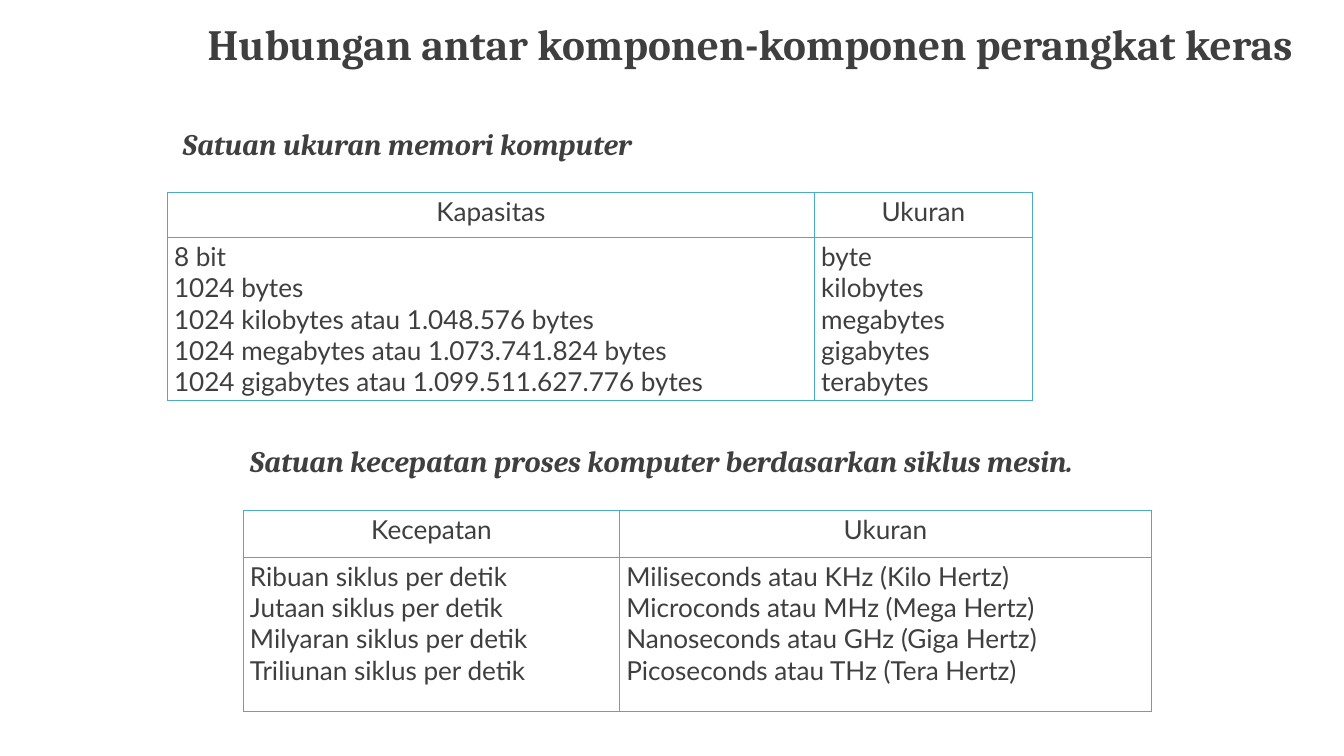
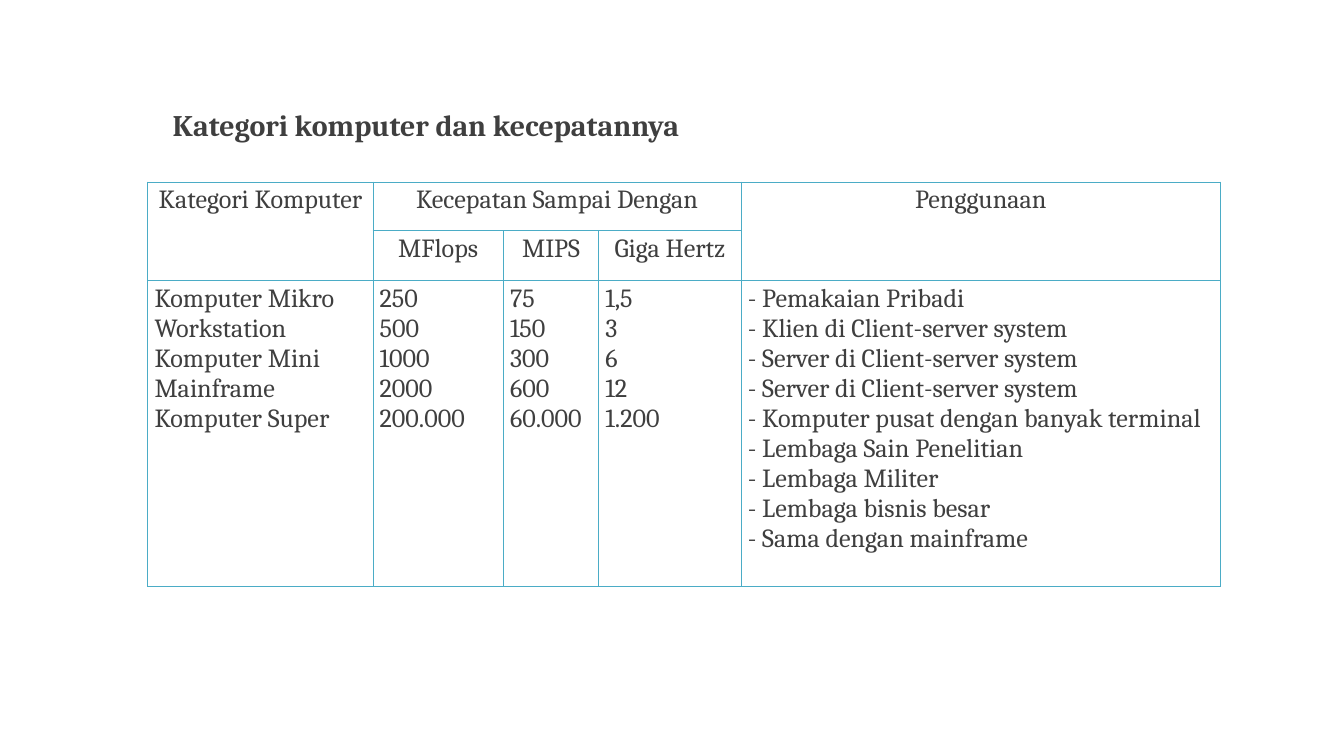
from dataclasses import dataclass

from lxml import etree
from pptx import Presentation
from pptx.dml.color import RGBColor
from pptx.enum.text import MSO_ANCHOR, MSO_AUTO_SIZE, PP_ALIGN
from pptx.oxml.ns import qn
from pptx.util import Inches, Pt

LEFT, MID, JUST = PP_ALIGN.LEFT, PP_ALIGN.CENTER, PP_ALIGN.JUSTIFY
CENTRE = MSO_ANCHOR.MIDDLE
FIXED = MSO_AUTO_SIZE.NONE
TITLE_ONLY = 5


@dataclass(frozen=True)
class Theme:
    ink: str = "3F3F3F"
    rule: str = "4BACC6"
    paper: str = "FFFFFF"
    serif: str = "Cambria"
    sans: str = "Lato"
    title: float = 46.2
    head: float = 32
    body: float = 28
    hang: float = 0.38
    line: float = 1


class Deck:
    def __init__(self, theme):
        self.theme = theme
        self.prs = Presentation()
        self.prs.slide_width = Inches(20)
        self.prs.slide_height = Inches(11.25)
        self.slide = None

    def page(self):
        layout = self.prs.slide_layouts[TITLE_ONLY]
        self.slide = self.prs.slides.add_slide(layout)
        fill = self.slide.background.fill
        fill.solid()
        fill.fore_color.rgb = RGBColor.from_string(self.theme.paper)

    def style(self, para, face, size, align, bold=False, italic=False):
        para.alignment = align
        for run in para.runs:
            font = run.font
            font.name, font.size = face, Pt(size)
            font.bold, font.italic = bold, italic
            font.color.rgb = RGBColor.from_string(self.theme.ink)

    def fit(self, shape, text, box, size, align, italic):
        """Place a one-line heading and style it."""
        shape.left, shape.top, shape.width, shape.height = map(Inches, box)
        frame = shape.text_frame
        frame.text = text
        frame.word_wrap = True
        frame.auto_size = FIXED
        frame.vertical_anchor = CENTRE
        self.style(frame.paragraphs[0], self.theme.serif, size, align,
                   bold=True, italic=italic)

    def title(self, text, box, size, align):
        self.fit(self.slide.shapes.title, text, box, size, align, False)

    def head(self, text, box):
        shape = self.slide.shapes.add_textbox(*map(Inches, box))
        self.fit(shape, text, box, self.theme.head, LEFT, True)

    def edge(self, cell):
        """Draw the four borders of a cell and leave it unfilled."""
        props = cell._tc.get_or_add_tcPr()
        for side in ("lnL", "lnR", "lnT", "lnB"):
            line = etree.SubElement(props, qn("a:" + side),
                                    w=str(Pt(self.theme.line)))
            fill = etree.SubElement(line, qn("a:solidFill"))
            etree.SubElement(fill, qn("a:srgbClr"), val=self.theme.rule)
        cell.fill.background()

    def label(self, cell, text, face, align):
        cell.text_frame.text = text
        for para in cell.text_frame.paragraphs:
            props = para._p.get_or_add_pPr()
            props.set("marL", str(Inches(self.theme.hang)))
            props.set("indent", str(-Inches(self.theme.hang)))
            self.style(para, face, self.theme.body, align)

    def table(self, spot, cols, rows, heads, lists, face, align, spans=()):
        """Fill head rows with labels and the last row with lists."""
        size = sum(cols), sum(rows)
        frame = self.slide.shapes.add_table(
            len(rows), len(cols), *map(Inches, spot + size))
        table = frame.table
        table.first_row = table.horz_banding = False
        for col, width in zip(table.columns, cols):
            col.width = Inches(width)
        for row, height in zip(table.rows, rows):
            row.height = Inches(height)
        for first, last in spans:
            table.cell(*first).merge(table.cell(*last))
        grid = heads + [["\n".join(items) for items in lists]]
        for r, labels in enumerate(grid):
            for c, text in enumerate(labels):
                cell = table.cell(r, c)
                self.edge(cell)
                if text:
                    self.label(cell, text, face,
                               MID if r < len(heads) else align)


def units(deck):
    theme = deck.theme
    deck.page()
    deck.title("Hubungan antar komponen-komponen perangkat keras",
               (2.32, 0.26, 17.68, 0.76), theme.title, MID)
    deck.table(
        (2.49, 2.87), (9.63, 3.24), (0.66, 2.41),
        [["Kapasitas", "Ukuran"]],
        [["8 bit", "1024 bytes",
          "1024 kilobytes atau 1.048.576 bytes",
          "1024 megabytes atau 1.073.741.824 bytes",
          "1024 gigabytes atau 1.099.511.627.776 bytes"],
         ["byte", "kilobytes", "megabytes", "gigabytes", "terabytes"]],
        theme.sans, JUST)
    speeds = ["Ribuan", "Jutaan", "Milyaran", "Triliunan"]
    deck.table(
        (3.62, 7.59), (5.6, 7.91), (0.7, 2.29),
        [["Kecepatan", "Ukuran"]],
        [[f"{speed} siklus per detik" for speed in speeds],
         ["Miliseconds atau KHz (Kilo Hertz)",
          "Microconds atau MHz (Mega Hertz)",
          "Nanoseconds atau GHz (Giga Hertz)",
          "Picoseconds atau THz (Tera Hertz)"]],
        theme.sans, LEFT)
    deck.head("Satuan ukuran memori komputer", (2.62, 1.79, 8.18, 0.69))
    deck.head("Satuan kecepatan proses komputer berdasarkan siklus mesin.",
              (3.62, 6.43, 12.7, 0.86))


def classes(deck):
    theme = deck.theme
    deck.page()
    deck.title("Kategori komputer dan kecepatannya",
               (2.47, 1.43, 10.68, 0.86), theme.head, LEFT)
    deck.table(
        (2.2, 2.71), (3.35, 1.94, 1.42, 2.12, 7.13), (0.72, 0.74, 4.55),
        [["Kategori Komputer", "Kecepatan Sampai Dengan", "", "",
          "Penggunaan"],
         ["", "MFlops", "MIPS", "Giga Hertz", ""]],
        [["Komputer Mikro", "Workstation", "Komputer Mini", "Mainframe",
          "Komputer Super"],
         ["250", "500", "1000", "2000", "200.000"],
         ["75", "150", "300", "600", "60.000"],
         ["1,5", "3", "6", "12", "1.200"],
         ["- Pemakaian Pribadi",
          "- Klien di Client-server system",
          "- Server di Client-server system",
          "- Server di Client-server system",
          "- Komputer pusat dengan banyak terminal",
          "- Lembaga Sain Penelitian",
          "- Lembaga Militer",
          "- Lembaga bisnis besar",
          "- Sama dengan mainframe"]],
        theme.serif, JUST,
        spans=[((0, 0), (1, 0)), ((0, 1), (0, 3)), ((0, 4), (1, 4))])


def main():
    deck = Deck(Theme())
    units(deck)
    classes(deck)
    deck.prs.save("out.pptx")


if __name__ == "__main__":
    main()
